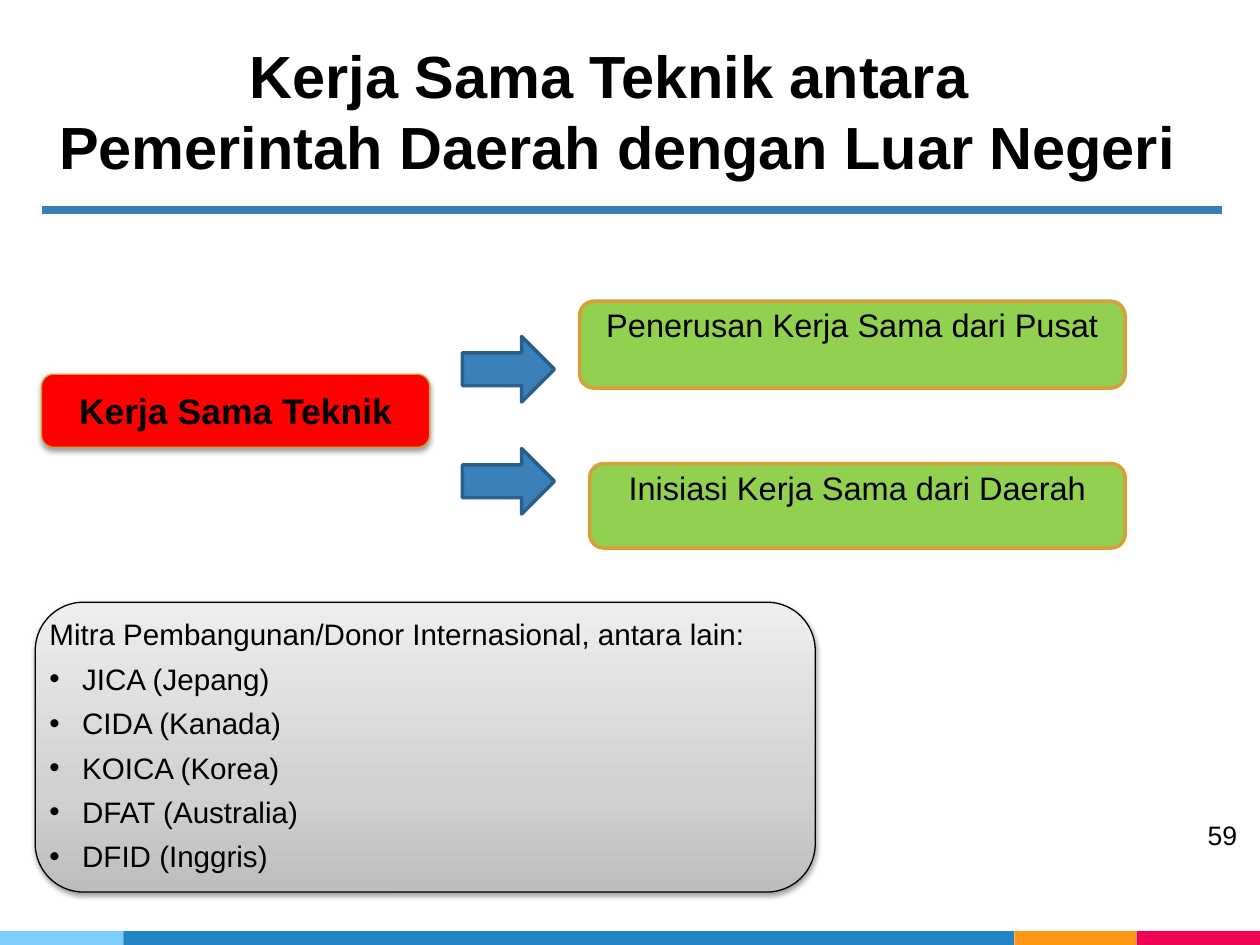
from pptx import Presentation
from pptx.dml.color import RGBColor
from pptx.enum.shapes import MSO_CONNECTOR, MSO_SHAPE
from pptx.enum.text import MSO_ANCHOR, PP_ALIGN
from pptx.oxml import parse_xml
from pptx.oxml.ns import nsdecls
from pptx.util import Inches, Pt

COLORS = {
    "black": "000000", "red": "FF0000", "gold": "D79D34", "green": "92D050",
    "green_edge": "D89F39", "arrow": "3A81BA", "arrow_edge": "2B5F8A", "rule": "367EB9",
    "sky": "7ECEFD", "blue": "2185C5", "orange": "FF9715", "pink": "F20253",
}
FONT = "Arial"

# Content
TITLE = ["Kerja Sama Teknik antara ", "Pemerintah Daerah dengan Luar Negeri"]
TOPIC = "Kerja Sama Teknik"
SOURCES = [
    ("Penerusan Kerja Sama dari Pusat", (4.6, 2.39, 4.33, 0.69)),
    ("Inisiasi Kerja Sama dari Daerah", (4.68, 3.68, 4.25, 0.67)),
]
PARTNERS_HEADING = "Mitra Pembangunan/Donor Internasional, antara lain:"
PARTNERS = ["JICA (Jepang)", "CIDA (Kanada)", "KOICA (Korea)", "DFAT (Australia)",
            "DFID (Inggris)"]
PAGE_NUMBER = "59"
FOOTER = [("sky", 0.98), ("blue", 7.07), ("orange", 0.97), ("pink", 0.98)]
GRADIENT = [(0, "BDBDBD"), (35, "D1D1D1"), (100, "EEEEEE")]


def rgb(name):
    return RGBColor.from_string(COLORS[name])


def add_box(slide, kind, box, fill=None, line=None, width=0.75):
    shape = slide.shapes.add_shape(kind, *map(Inches, box))
    shape.shadow.inherit = False
    if fill:
        shape.fill.solid()
        shape.fill.fore_color.rgb = rgb(fill)
    if line:
        shape.line.color.rgb = rgb(line)
        shape.line.width = Pt(width)
    else:
        shape.line.fill.background()
    return shape


def write(shape, lines, size, bold=False, align=PP_ALIGN.CENTER,
          anchor=MSO_ANCHOR.TOP, margins=(0, 0), after=0, bullets_from=None):
    frame = shape.text_frame
    across, down = map(Inches, margins)
    frame_format = {"word_wrap": True, "vertical_anchor": anchor,
                    "margin_left": across, "margin_right": across,
                    "margin_top": down, "margin_bottom": down}
    for name, value in frame_format.items():
        setattr(frame, name, value)
    for index, line in enumerate(lines):
        paragraph = frame.paragraphs[0] if index == 0 else frame.add_paragraph()
        paragraph.text = line
        paragraph.alignment = align
        paragraph.space_after = Pt(after)
        if bullets_from is not None and index >= bullets_from:
            add_bullet(paragraph)
        font_format = {"name": FONT, "size": Pt(size), "bold": bold}
        for run in paragraph.runs:
            for name, value in font_format.items():
                setattr(run.font, name, value)
            run.font.color.rgb = rgb("black")


def add_bullet(paragraph):
    properties = paragraph._p.get_or_add_pPr()
    indent = Inches(0.26)
    properties.set("marL", str(indent))
    properties.set("indent", str(-indent))
    for content in (f'<a:buClr {nsdecls("a")}><a:srgbClr val="{COLORS["black"]}"/></a:buClr>',
                    f'<a:buFont {nsdecls("a")} typeface="{FONT}"/>',
                    f'<a:buChar {nsdecls("a")} char="•"/>'):
        properties.append(parse_xml(content))


def add_shadow(shape):
    effects = shape._element.spPr.find(
        "{http://schemas.openxmlformats.org/drawingml/2006/main}effectLst")
    effects.append(parse_xml(
        f'<a:outerShdw {nsdecls("a")} blurRad="{Pt(3.1)}" dist="{Pt(1.6)}" dir="5400000" '
        f'rotWithShape="0"><a:srgbClr val="{COLORS["black"]}"><a:alpha val="38000"/>'
        '</a:srgbClr></a:outerShdw>'))


def fill_gradient(shape):
    shape.fill.gradient()
    shape.fill.gradient_angle = 90
    stops = shape._element.spPr.find(
        ".//{http://schemas.openxmlformats.org/drawingml/2006/main}gsLst")
    for stop in list(stops):
        stops.remove(stop)
    for position, color in GRADIENT:
        stops.append(parse_xml(f'<a:gs {nsdecls("a")} pos="{position * 1000}">'
                               f'<a:srgbClr val="{color}"/></a:gs>'))


def main():
    presentation = Presentation()
    presentation.slide_width, presentation.slide_height = Inches(10), Inches(7.5)
    slide = presentation.slides.add_slide(presentation.slide_layouts[6])

    # Footer stripe
    left = 0
    for color, width in FOOTER:
        add_box(slide, MSO_SHAPE.RECTANGLE, (left, 7.39, width, 0.11), color)
        left += width

    # Topic
    topic = add_box(slide, MSO_SHAPE.ROUNDED_RECTANGLE, (0.33, 2.97, 3.08, 0.58),
                    "red", "gold")
    add_shadow(topic)
    write(topic, [TOPIC], 20.3, bold=True, anchor=MSO_ANCHOR.MIDDLE)

    # Partner panel
    panel = add_box(slide, MSO_SHAPE.ROUNDED_RECTANGLE, (0.28, 4.78, 6.19, 2.3),
                    line="black")
    fill_gradient(panel)
    add_shadow(panel)
    write(panel, [PARTNERS_HEADING] + PARTNERS, 16.9, align=PP_ALIGN.LEFT,
          after=5.1, bullets_from=1)

    # Title and rule
    title = slide.shapes.add_textbox(*map(Inches, (-0.1, 0.51, 10, 0.73)))
    write(title, TITLE, 34, bold=True, anchor=MSO_ANCHOR.MIDDLE, margins=(0.1, 0.05))
    rule = slide.shapes.add_connector(MSO_CONNECTOR.STRAIGHT,
                                      *map(Inches, (0.33, 1.67, 9.7, 1.67)))
    rule.line.color.rgb = rgb("rule")
    rule.line.width = Pt(4.5)
    rule._element.spPr.append(parse_xml(f'<a:effectLst {nsdecls("a")}/>'))

    # Two sources of cooperation, each with its arrow
    for index, (label, box) in enumerate(SOURCES):
        source = add_box(slide, MSO_SHAPE.ROUNDED_RECTANGLE, box, "green", "green_edge", 2)
        write(source, [label], 18.6)
        add_box(slide, MSO_SHAPE.RIGHT_ARROW, (3.67, 2.67 + 0.89 * index, 0.73, 0.52),
                "arrow", "arrow_edge", 2)

    # Page number
    number = slide.shapes.add_textbox(*map(Inches, (9.07, 6.47, 0.83, 0.32)))
    write(number, [PAGE_NUMBER], 15.2, align=PP_ALIGN.RIGHT,
          anchor=MSO_ANCHOR.BOTTOM, margins=(0.08, 0.04))

    presentation.save("out.pptx")


if __name__ == "__main__":
    main()
